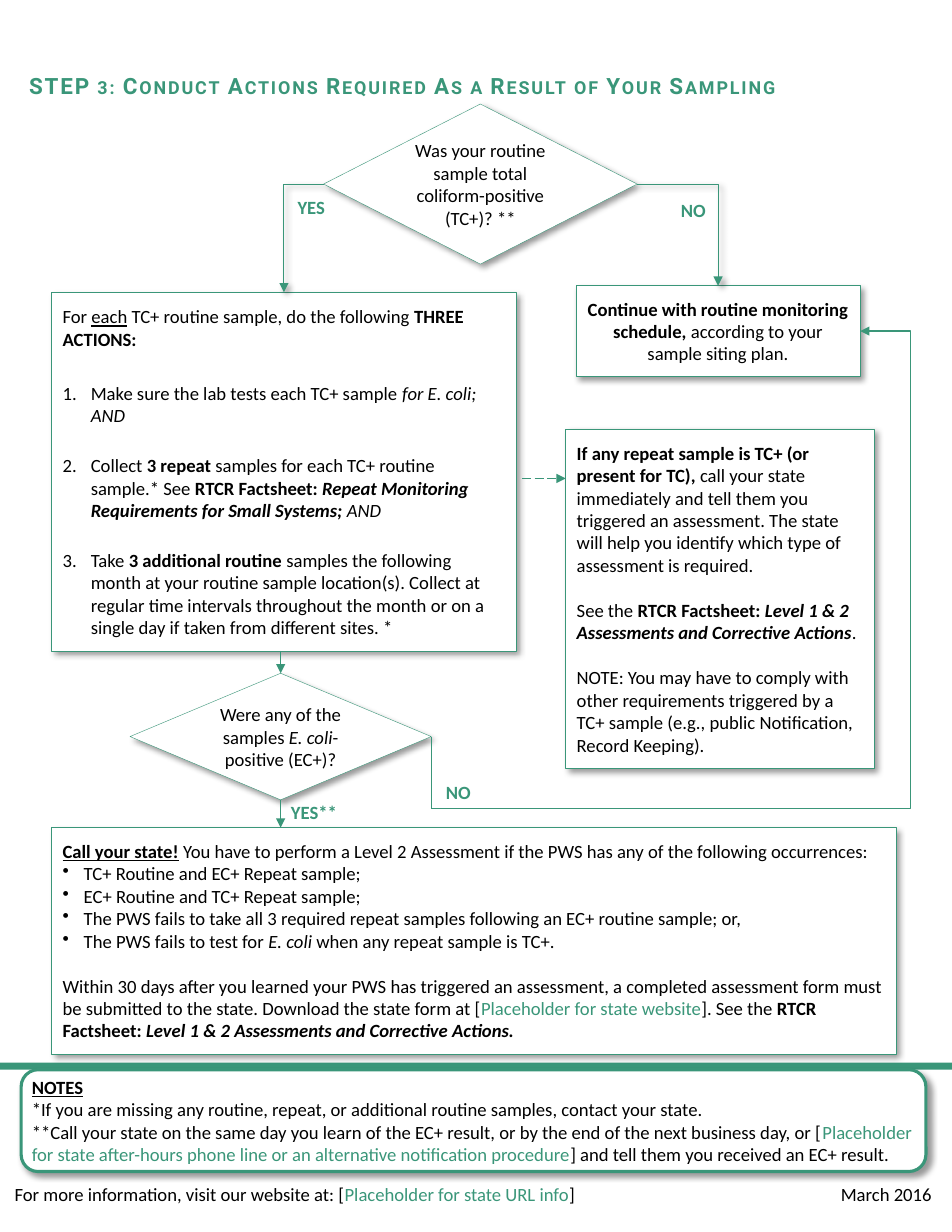
from lxml.etree import SubElement
from pptx import Presentation
from pptx.dml.color import RGBColor
from pptx.enum.dml import MSO_LINE
from pptx.enum.shapes import MSO_CONNECTOR as LINK, MSO_SHAPE as SHAPE
from pptx.enum.text import MSO_ANCHOR as ANCHOR, MSO_AUTO_SIZE as FIT, PP_ALIGN as ALIGN
from pptx.oxml.ns import qn
from pptx.util import Cm, Pt

GREEN = RGBColor(0x3A, 0x96, 0x79)
BLACK = RGBColor(0, 0, 0)
WHITE = RGBColor(255, 255, 255)
TOP, LEFT, BOTTOM, RIGHT = range(4)
BLANK_LINE = 14.6

# Content: a paragraph is a list of (text, style) runs; b bold, i italic, u underline, g green
TITLE = "STEP 3: Conduct Actions Required As a Result of Your Sampling"
WEBSITE = [[("For more information, visit our website at: [", ""),
            ("Placeholder for state URL info", "g"), ("]", "")]]
DATE = [[("March 2016", "")]]
COLIFORM = [[("Was your routine sample total coliform-positive (TC+)? **", "")]]
ECOLI = [[("Were any of the samples ", ""), ("E. coli", "i"), ("-positive (EC+)?", "")]]
MONITORING = [[("Continue with routine monitoring schedule,", "b"),
               (" according to your sample siting plan.", "")]]
ACTIONS_INTRO = [("For ", ""), ("each", "u"),
                 (" TC+ routine sample, do the following ", ""), ("THREE ACTIONS:", "b")]
ACTIONS = [
    [("Make sure the lab tests each TC+ sample ", ""), ("for E. coli; AND", "i")],
    [("Collect ", ""), ("3 repeat ", "b"), ("samples for each TC+ routine sample.* See ", ""),
     ("RTCR Factsheet: ", "b"),
     ("Repeat Monitoring Requirements for Small Systems; ", "bi"), ("AND", "i")],
    [("Take ", ""), ("3 additional routine ", "b"),
     ("samples the following month at your routine sample location(s). Collect at regular "
      "time intervals throughout the month or on a single day if taken from different "
      "sites. *", "")],
]
ASSESSMENT = [
    [("If any repeat sample is TC+ (or present for TC), ", "b"),
     ("call your state immediately and tell them you triggered an assessment. The state "
      "will help you identify which type of assessment is required.", "")],
    [("See the ", ""), ("RTCR Factsheet: ", "b"),
     ("Level 1 & 2 Assessments and Corrective Actions", "bi"), (".", "")],
    [("NOTE: You may have to comply with other requirements triggered by a TC+ sample "
      "(e.g., public Notification, Record Keeping).", "")],
]
CALL_INTRO = [("Call your state!", "bu"),
              (" You have to perform a Level 2 Assessment if the PWS has any of the "
               "following occurrences:", "")]
OCCURRENCES = [
    [("TC+ Routine and EC+ Repeat sample;", "")],
    [("EC+ Routine and TC+ Repeat sample;", "")],
    [("The PWS fails to take all 3 required repeat samples following an EC+ routine "
      "sample; or,", "")],
    [("The PWS fails to test for ", ""), ("E. coli", "i"),
     (" when any repeat sample is TC+.", "")],
]
CALL_DEADLINE = [
    ("Within 30 days after you learned your PWS has triggered an assessment, a completed "
     "assessment form must be submitted to the state. Download the state form at [", ""),
    ("Placeholder for state website", "g"), ("]. See the ", ""), ("RTCR Factsheet: ", "b"),
    ("Level 1 & 2 Assessments and Corrective Actions.", "bi")]
NOTES = [
    [("NOTES", "bu")],
    [("*If you are missing any routine, repeat, or additional routine samples, contact "
      "your state.", "")],
    [("**Call your state on the same day you learn of the EC+ result, or by the end of the "
      "next business day, or [", ""),
     ("Placeholder for state after-hours phone line or an alternative notification "
      "procedure", "g"), ("] and tell them you received an EC+ result.", "")],
]
ANSWERS = [("YES", 6.5, 4.32, 1.14), ("NO", 15.19, 4.37, 1.07),
           ("YES**", 6.35, 18.03, 1.57), ("NO", 9.86, 17.58, 1.07)]

prs = Presentation()
prs.slide_width, prs.slide_height = Cm(21.59), Cm(27.94)
slide = prs.slides.add_slide(prs.slide_layouts[3])


def place(shape, *box):
    shape.left, shape.top, shape.width, shape.height = map(Cm, box)


def write(shape, paragraphs, inset=(0.25, 0.25), anchor=ANCHOR.MIDDLE, align=ALIGN.LEFT,
          gaps=(), bullets=(), indent=0, wrap=True):
    """Fill a shape; gaps maps paragraph to space before, bullets lists (tag, attributes)."""
    frame = shape.text_frame
    frame.word_wrap, frame.auto_size, frame.vertical_anchor = wrap, FIT.NONE, anchor
    frame.margin_left = frame.margin_right = Cm(inset[0])
    frame.margin_top = frame.margin_bottom = Cm(inset[1])
    gaps, bullets = dict(gaps), dict(bullets)
    for index, runs in enumerate(paragraphs):
        paragraph = frame.paragraphs[0] if index == 0 else frame.add_paragraph()
        paragraph.alignment = align
        paragraph.space_before = Pt(gaps.get(index, 0))
        props = paragraph._p.get_or_add_pPr()
        margin = Cm(indent) if index in bullets else 0
        props.set("marL", str(margin))
        props.set("indent", str(-margin))
        tag, attributes = bullets.get(index, ("a:buNone", {}))
        SubElement(props, qn(tag), attributes)
        font = paragraph.font
        font.name, font.size, font.color.rgb = "Calibri", Pt(12), BLACK
        for text, style in runs:
            run = paragraph.add_run()
            run.text = text
            if "b" in style:
                run.font.bold = True
            if "i" in style:
                run.font.italic = True
            if "u" in style:
                run.font.underline = True
            if "g" in style:
                run.font.color.rgb = GREEN


def add_shadow(shape):
    effects = SubElement(shape._element.spPr, qn("a:effectLst"))
    shadow = SubElement(effects, qn("a:outerShdw"), blurRad=str(Pt(4)), dist=str(Pt(3)),
                        dir="2700000", algn="tl", rotWithShape="0")
    color = SubElement(shadow, qn("a:srgbClr"), val="000000")
    SubElement(color, qn("a:alpha"), val="40000")


def add_box(kind, box, paragraphs, line_width=0.25, **text_format):
    shape = slide.shapes.add_shape(kind, *map(Cm, box))
    shape.fill.solid()
    shape.fill.fore_color.rgb = WHITE
    shape.line.color.rgb = GREEN
    shape.line.width = Pt(line_width)
    add_shadow(shape)
    write(shape, paragraphs, **text_format)
    return shape


def side(shape, site):
    x = shape.left + (0, shape.width)[site == RIGHT] if site in (LEFT, RIGHT) \
        else shape.left + shape.width // 2
    y = shape.top + (0, shape.height)[site == BOTTOM] if site in (TOP, BOTTOM) \
        else shape.top + shape.height // 2
    return x, y


def add_link(start, end, kind=LINK.STRAIGHT, arrow=True, shadow=False):
    link = slide.shapes.add_connector(kind, *start, *end)
    link.line.color.rgb = GREEN
    link.line.width = Pt(0.75)
    if arrow:
        SubElement(link.line._get_or_add_ln(), qn("a:tailEnd"), type="triangle")
    if shadow:
        add_shadow(link)
    else:
        SubElement(link._element.spPr, qn("a:effectLst"))
    return link


# Title and footer
title, website, date = slide.placeholders
place(title, 0.38, 1.4, 19.43, 1.07)
write(title, [[(TITLE, "b")]], inset=(0.28, 0.15))
heading = title.text_frame.paragraphs[0]
heading.font.name, heading.font.size, heading.font.color.rgb = "Roboto", Pt(14.4), GREEN
heading_props = heading.runs[0]._r.get_or_add_rPr()
heading_props.set("cap", "small")
heading_props.set("spc", "120")
place(website, 0.2, 26.7, 17.78, 1.09)
write(website, WEBSITE, inset=(0.13, 0.13), anchor=ANCHOR.TOP)
place(date, 18.08, 26.7, 3.18, 1.09)
write(date, DATE, inset=(0.13, 0.13), anchor=ANCHOR.TOP, align=ALIGN.RIGHT)

# Rule and notes
rule = slide.shapes.add_shape(SHAPE.RECTANGLE, 0, Cm(24.1), prs.slide_width, Cm(0.16))
rule.shadow.inherit = False
rule.fill.solid()
rule.fill.fore_color.rgb = GREEN
rule.line.fill.background()
add_box(SHAPE.ROUNDED_RECTANGLE, (0.48, 24.26, 20.52, 2.31), NOTES, 2, inset=(0.13, 0.25))

# Flowchart boxes
monitoring = add_box(SHAPE.FLOWCHART_PROCESS, (13.06, 6.48, 6.45, 2.06), MONITORING,
                     align=ALIGN.CENTER)
call = add_box(SHAPE.FLOWCHART_PROCESS, (1.17, 18.77, 19.15, 5.13),
               [CALL_INTRO, *OCCURRENCES, CALL_DEADLINE], gaps={5: BLANK_LINE}, indent=0.48,
               bullets={n: ("a:buChar", {"char": "•"}) for n in range(1, 5)})
ecoli = add_box(SHAPE.FLOWCHART_DECISION, (2.95, 15.27, 6.83, 2.87), ECOLI,
                inset=(0.25, 0.13), align=ALIGN.CENTER)
assessment = add_box(SHAPE.FLOWCHART_PROCESS, (12.83, 9.73, 6.99, 7.7), ASSESSMENT,
                     gaps={1: BLANK_LINE, 2: BLANK_LINE})
actions = add_box(SHAPE.FLOWCHART_PROCESS, (1.17, 6.63, 10.54, 8.13),
                  [ACTIONS_INTRO, *ACTIONS], indent=0.64,
                  gaps={1: BLANK_LINE + 6, 2: BLANK_LINE + 3, 3: BLANK_LINE + 3},
                  bullets={n: ("a:buAutoNum", {"type": "arabicPeriod"}) for n in range(1, 4)})
coliform = add_box(SHAPE.FLOWCHART_DECISION, (7.34, 2.36, 7.11, 3.63), COLIFORM,
                   inset=(0.25, 0.13), align=ALIGN.CENTER)

# One-bend arrows from the first question
for site, target in ((LEFT, actions), (RIGHT, monitoring)):
    branch = add_link(side(coliform, site), side(target, TOP), LINK.ELBOW, shadow=True)
    branch._element.spPr.find(qn("a:prstGeom")).set("prst", "bentConnector2")

# Straight arrows
ecoli_x, ecoli_top = side(ecoli, TOP)
add_link((ecoli_x, side(actions, BOTTOM)[1]), (ecoli_x, ecoli_top)).end_connect(ecoli, TOP)
add_link(side(ecoli, BOTTOM), (ecoli_x, call.top)).begin_connect(ecoli, BOTTOM)
repeat = add_link((Cm(11.84), Cm(10.85)), (assessment.left, Cm(10.85)))
repeat.line.dash_style = MSO_LINE.LONG_DASH

# Path back to routine monitoring, passing right of every box
corner = side(ecoli, RIGHT)[0], Cm(18.34)
add_link(side(ecoli, RIGHT), corner, arrow=False).begin_connect(ecoli, RIGHT)
back_end = side(monitoring, RIGHT)
back = add_link(corner, back_end, LINK.ELBOW)
bend = (Cm(20.65) - corner[0]) / (back_end[0] - corner[0])
adjust = back._element.spPr.find(qn("a:prstGeom")).get_or_add_avLst()
SubElement(adjust, qn("a:gd"), name="adj1", fmla=f"val {round(bend * 100000)}")

# Answers beside the arrows
for answer, left, top, width in ANSWERS:
    label = slide.shapes.add_textbox(Cm(left), Cm(top), Cm(width), Cm(0.76))
    write(label, [[(answer, "bg")]], inset=(0.25, 0.13), anchor=ANCHOR.TOP, wrap=False)

prs.save("out.pptx")
